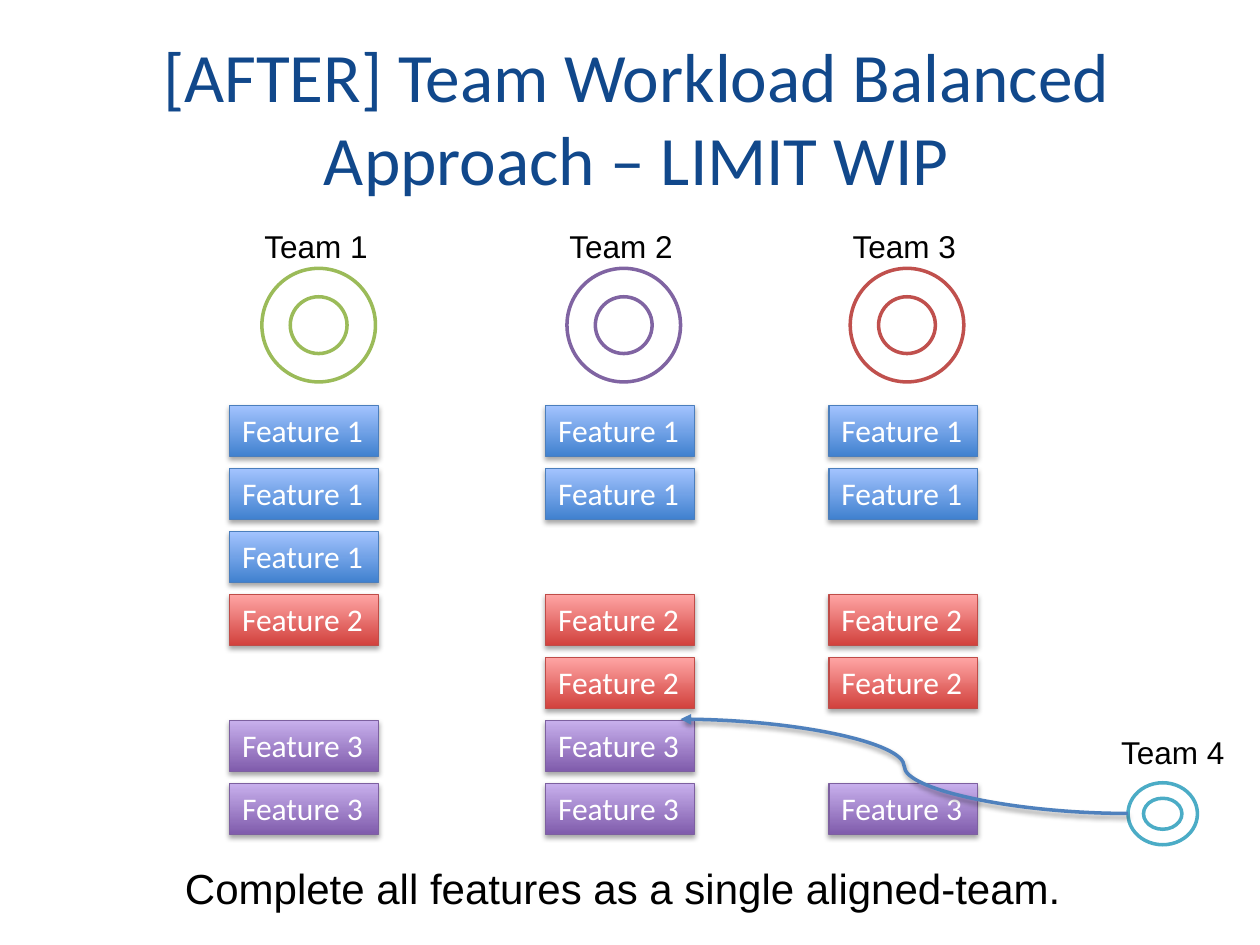
from dataclasses import dataclass

from lxml.etree import SubElement
from pptx import Presentation
from pptx.dml.color import RGBColor
from pptx.enum.shapes import MSO_CONNECTOR as Connector, MSO_SHAPE as Shape
from pptx.enum.text import MSO_ANCHOR as Anchor, MSO_AUTO_SIZE as AutoSize, PP_ALIGN as Align
from pptx.oxml.ns import qn
from pptx.util import Cm, Pt


@dataclass(frozen=True)
class Feature:
    name: str
    dark: str
    light: str
    edge: str


@dataclass(frozen=True)
class Team:
    name: str
    color: str
    label_left: float
    ring_left: float
    box_left: float
    rows: str  # one feature key per row, "-" for a free row


FEATURES = {
    "1": Feature("Feature 1", "3F80CE", "A4C4FF", "4B7EBC"),
    "2": Feature("Feature 2", "D1403C", "FFA6A5", "BF4C48"),
    "3": Feature("Feature 3", "7F5BAB", "C8B0ED", "7D60A0"),
}
TEAMS = [
    Team("Team 1", "9BBB59", 5.08, 5.28, 4.63, "1112-33"),
    Team("Team 2", "8064A2", 11.23, 11.43, 11.0, "11-2233"),
    Team("Team 3", "C0504D", 16.94, 17.14, 16.71, "11-22-3"),
]
FIRST_ROW, ROW_STEP = 8.17, 1.27
BOX_WIDTH, BOX_HEIGHT = 3.0, 1.04


def rgb(color: str) -> RGBColor:
    return RGBColor.from_string(color)


def style_text(frame, text: str, font: str, size: float, color: str, align=Align.LEFT) -> None:
    frame.text = text
    para = frame.paragraphs[0]
    para.alignment = align
    span = para.runs[0]
    span.font.name, span.font.size = font, Pt(size)
    span.font.color.rgb = rgb(color)


def add_shadow(properties, opacity: int, distance: float) -> None:
    effects = properties.find(qn("a:effectLst"))
    if effects is None:
        effects = SubElement(properties, qn("a:effectLst"))
    shadow = SubElement(effects, qn("a:outerShdw"), blurRad=str(Pt(3.1)),
                        dist=str(Pt(distance)), dir="5400000", rotWithShape="0")
    tint = SubElement(shadow, qn("a:srgbClr"), val="000000")
    SubElement(tint, qn("a:alpha"), val=str(opacity * 1000))


def add_label(page, text: str, left: float, top: float, width: float, height: float,
              size: float) -> None:
    box = page.shapes.add_textbox(Cm(left), Cm(top), Cm(width), Cm(height))
    box.text_frame.word_wrap = False
    box.text_frame.auto_size = AutoSize.SHAPE_TO_FIT_TEXT
    style_text(box.text_frame, text, "Arial", size, "000000")


def add_ring(page, left: float, top: float, width: float, height: float, color: str) -> None:
    ring = page.shapes.add_shape(Shape.DONUT, Cm(left), Cm(top), Cm(width), Cm(height))
    ring.shadow.inherit = False
    ring.fill.solid()
    ring.fill.fore_color.rgb = rgb("FFFFFF")
    ring.line.color.rgb = rgb(color)
    ring.line.width = Pt(2)


def add_feature(page, feature: Feature, left: float, top: float) -> None:
    box = page.shapes.add_shape(Shape.RECTANGLE, Cm(left), Cm(top), Cm(BOX_WIDTH), Cm(BOX_HEIGHT))
    box.fill.gradient()
    box.fill.gradient_angle = 90
    for stop, color in zip(box.fill.gradient_stops, (feature.dark, feature.light)):
        stop.color.rgb = rgb(color)
    box.line.color.rgb = rgb(feature.edge)
    box.line.width = Pt(0.75)
    box.shadow.inherit = False
    add_shadow(box._element.spPr, 35, 1.8)
    box.text_frame.word_wrap = False
    box.text_frame.vertical_anchor = Anchor.TOP
    style_text(box.text_frame, feature.name, "Calibri", 18, "FFFFFF")


def add_curved_arrow(page, start: tuple[float, float], end: tuple[float, float],
                     color: str) -> None:
    arrow = page.shapes.add_connector(Connector.CURVE, *map(Cm, start + end))
    arrow.line.color.rgb = rgb(color)
    arrow.line.width = Pt(2)
    SubElement(arrow.line._get_or_add_ln(), qn("a:tailEnd"), type="triangle")
    add_shadow(arrow._element.spPr, 38, 1.6)


def main() -> None:
    deck = Presentation()
    deck.slide_width, deck.slide_height = Cm(25.4), Cm(19.05)
    page = deck.slides.add_slide(deck.slide_layouts[5])

    # Title
    title = page.shapes.title
    title.left, title.top, title.width, title.height = Cm(0.84), Cm(0.76), Cm(23.98), Cm(3.18)
    title.text_frame.auto_size = AutoSize.NONE
    title.text_frame.vertical_anchor = Anchor.MIDDLE
    style_text(title.text_frame, "[AFTER] Team Workload Balanced Approach – LIMIT WIP",
               "Calibri", 39.6, "11488B", Align.CENTER)

    # Teams with their feature columns
    for team in TEAMS:
        add_label(page, team.name, team.label_left, 4.45, 2.62, 1.02, 18)
        add_ring(page, team.ring_left, 5.41, 2.29, 2.29, team.color)
        for row, key in enumerate(team.rows):
            if key in FEATURES:
                add_feature(page, FEATURES[key], team.box_left, FIRST_ROW + row * ROW_STEP)

    # Helping team and the work it takes on
    add_label(page, "Team 4", 22.35, 14.66, 2.62, 1.02, 18)
    add_ring(page, 22.74, 15.78, 1.4, 1.25, "4BACC6")
    add_curved_arrow(page, (22.74, 16.4), (13.72, 14.5), "4F81BD")

    # Conclusion
    add_label(page, "Complete all features as a single aligned-team.", 3.48, 17.27, 18.34, 1.27, 24)

    deck.save("out.pptx")


if __name__ == "__main__":
    main()
